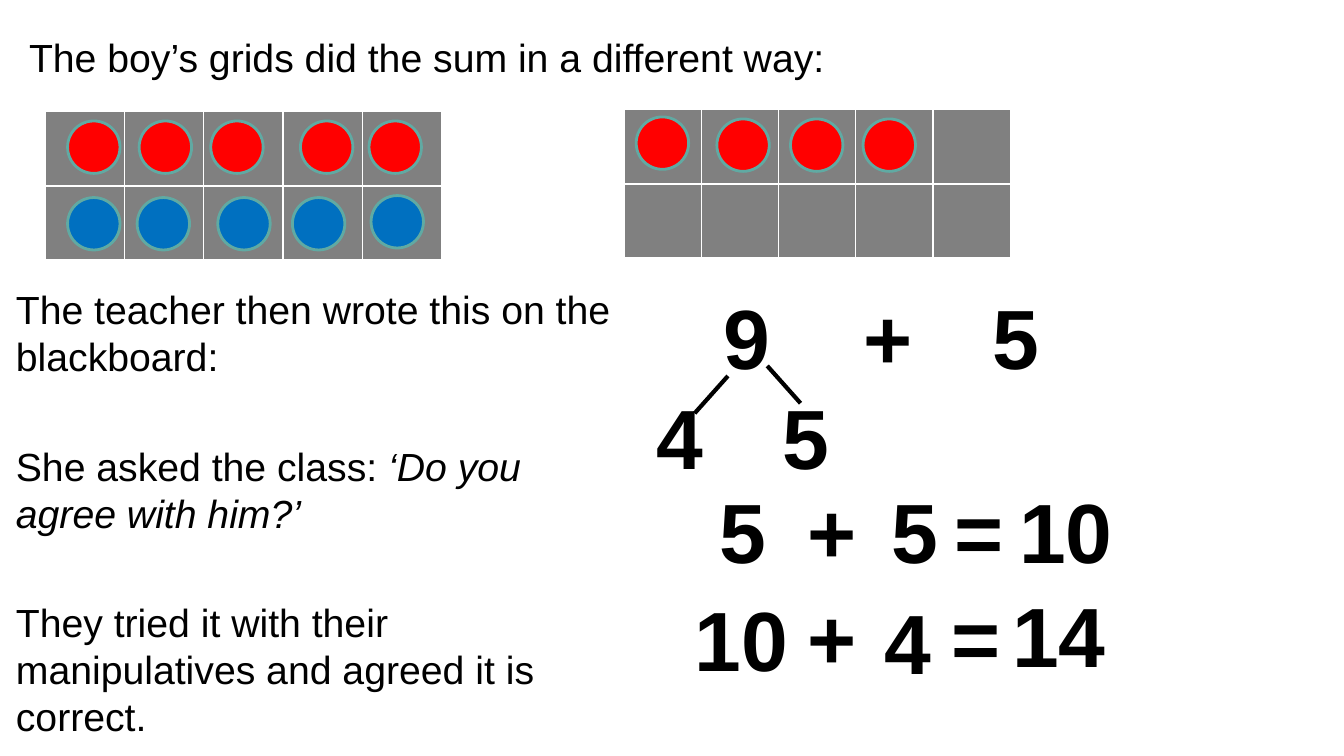
from lxml import etree
from pptx import Presentation
from pptx.dml.color import RGBColor
from pptx.enum.shapes import MSO_CONNECTOR, MSO_SHAPE
from pptx.enum.text import MSO_AUTO_SIZE
from pptx.oxml.ns import qn
from pptx.util import Inches, Pt

ELLIPSE = MSO_SHAPE.OVAL
STRAIGHT = MSO_CONNECTOR.STRAIGHT
FIT_SHAPE = MSO_AUTO_SIZE.SHAPE_TO_FIT_TEXT

COLORS = {
    "cell": "808080",
    "red": "FF0000",
    "blue": "0070C0",
    "rim": "60AAA3",
    "ink": "000000",
}
BODY_FORMAT = {"name": "Arial", "size": Pt(28), "bold": False}
DIGIT_FORMAT = {"name": "Arial", "size": Pt(60), "bold": True}
LINE_RATIO = 1.2

GRID_ROWS, GRID_COLUMNS = 2, 5
GRIDS = [(6.19, 1.09, 3.83, 1.47), (0.45, 1.11, 3.93, 1.47)]

COUNTER_SIZE = 0.52
COUNTERS = {
    "red": [
        (0.67, 1.2), (1.38, 1.2), (2.09, 1.2), (2.98, 1.2), (3.66, 1.2),
        (6.31, 1.16), (7.11, 1.18), (7.84, 1.18), (8.56, 1.18),
    ],
    "blue": [(0.67, 1.96), (1.36, 1.96), (2.16, 1.96), (2.9, 1.96), (3.68, 1.94)],
}

DIGIT_WIDTH, WIDE_WIDTH, DIGIT_HEIGHT = 0.76, 2.2, 1.11
DIGITS = [
    ("9", 7.08, 2.78), ("+", 8.47, 2.78), ("5", 9.75, 2.78),
    ("4", 6.41, 3.78), ("5", 7.66, 3.78),
    ("5", 7.04, 4.71), ("+", 7.91, 4.71), ("5", 8.74, 4.71),
    ("=", 9.37, 4.71), ("10", 10.01, 4.71),
    ("10", 6.79, 5.78), ("+", 7.91, 5.76), ("4", 8.67, 5.81),
    ("=", 9.34, 5.76), ("14", 9.94, 5.74),
]
BRANCHES = [(7.61, 3.63, 7.94, 4), (7.22, 3.73, 6.89, 4.1)]

TITLE = [[("The boy’s grids did the sum in a different way:", False)]]
STORY = [
    [("The teacher then wrote this on the blackboard:", False)],
    [("She asked the class: ", False), ("‘Do you agree with him?’", True)],
    [("They tried it with their manipulatives and agreed it is correct.", False)],
]
STORY_GAP = Pt(44.8)


def color(name):
    return RGBColor.from_string(COLORS[name])


def add_grid(slide, box):
    frame = slide.shapes.add_table(GRID_ROWS, GRID_COLUMNS, *map(Inches, box))
    for cell in frame.table.iter_cells():
        cell.fill.solid()
        cell.fill.fore_color.rgb = color("cell")


def add_counter(slide, left, top, fill):
    box = (left, top, COUNTER_SIZE, COUNTER_SIZE)
    shape = slide.shapes.add_shape(ELLIPSE, *map(Inches, box))
    shape.shadow.inherit = False
    shape.fill.solid()
    shape.fill.fore_color.rgb = color(fill)
    shape.line.color.rgb = color("rim")
    shape.line.width = Pt(2)


def add_text(slide, box, paragraphs, font_format):
    frame = slide.shapes.add_textbox(*map(Inches, box)).text_frame
    frame.word_wrap = True
    frame.auto_size = FIT_SHAPE
    for index, runs in enumerate(paragraphs):
        paragraph = frame.add_paragraph() if index else frame.paragraphs[0]
        paragraph.line_spacing = Pt(font_format["size"].pt * LINE_RATIO)
        if index:
            paragraph.space_before = STORY_GAP
        for text, italic in runs:
            run = paragraph.add_run()
            run.text = text
            run.font.italic = italic
            run.font.color.rgb = color("ink")
            for attribute, value in font_format.items():
                setattr(run.font, attribute, value)


def add_branch(slide, ends):
    connector = slide.shapes.add_connector(STRAIGHT, *map(Inches, ends))
    connector.line.color.rgb = color("ink")
    connector.line.width = Pt(3)
    etree.SubElement(connector._element.spPr, qn("a:effectLst"))


def main():
    presentation = Presentation()
    presentation.slide_width = Inches(13.33)
    presentation.slide_height = Inches(7.5)
    slide = presentation.slides.add_slide(presentation.slide_layouts[6])

    for box in GRIDS:
        add_grid(slide, box)
    for fill, places in COUNTERS.items():
        for left, top in places:
            add_counter(slide, left, top, fill)
    for text, left, top in DIGITS:
        width = WIDE_WIDTH if len(text) > 1 else DIGIT_WIDTH
        add_text(slide, (left, top, width, DIGIT_HEIGHT), [[(text, False)]], DIGIT_FORMAT)
    for ends in BRANCHES:
        add_branch(slide, ends)
    add_text(slide, (0.19, 0.28, 10.8, 0.57), TITLE, BODY_FORMAT)
    add_text(slide, (0.06, 2.78, 6.26, 4.72), STORY, BODY_FORMAT)

    presentation.save("out.pptx")


if __name__ == "__main__":
    main()
